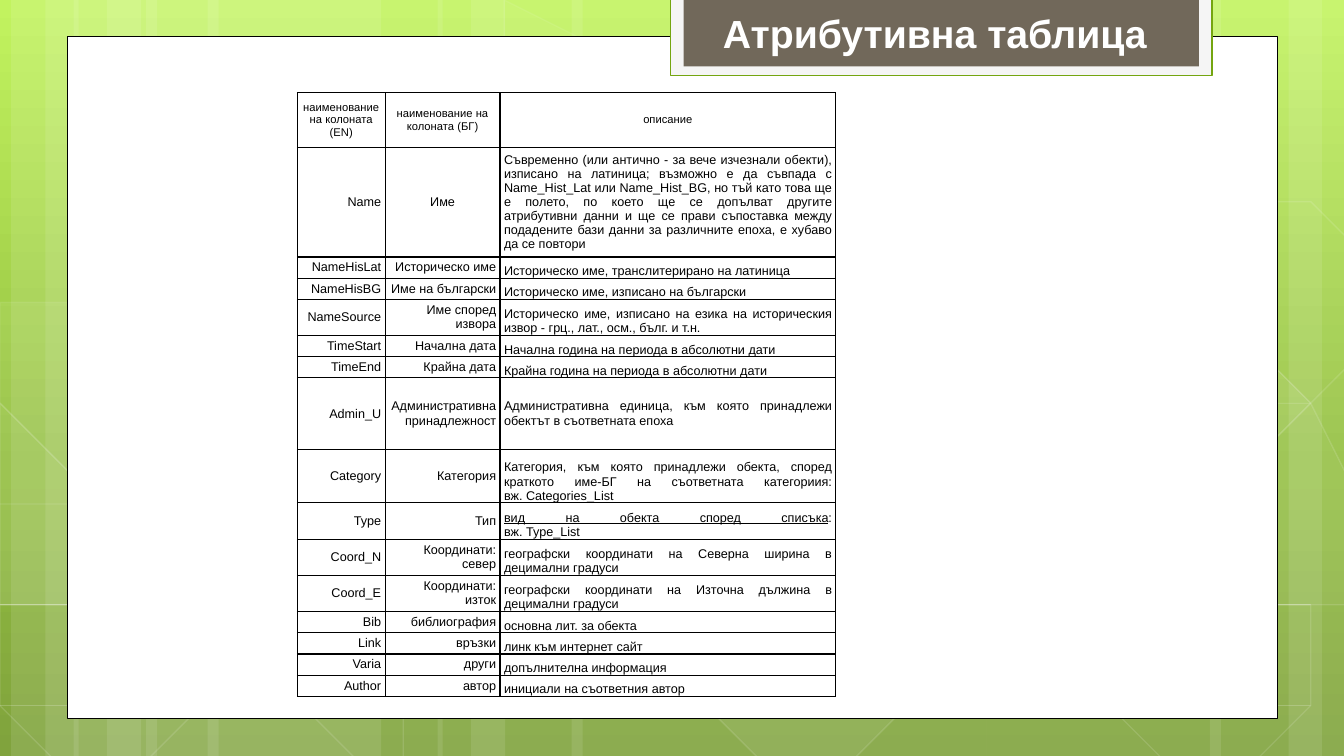
import copy

import pptx
import pptx.dml.color
import pptx.enum.shapes
import pptx.enum.text
import pptx.oxml
import pptx.oxml.ns
import pptx.util

RGBColor = pptx.dml.color.RGBColor
Pt = pptx.util.Pt
PP_ALIGN = pptx.enum.text.PP_ALIGN
ANCHOR = pptx.enum.text.MSO_ANCHOR
qn = pptx.oxml.ns.qn

# Content
TITLE = "Атрибутивна таблица"
HEADER = ("наименование на колоната (EN)", "наименование на колоната (БГ)", "описание")
UNDERLINED = "вид на обекта според списъка"
ATTRIBUTES = [  # row height in inches, column name EN, column name BG, description
    (1.09, "Name", "Име",
     "Съвременно (или антично - за вече изчезнали обекти), изписано на латиница; "
     "възможно е да съвпада с Name_Hist_Lat или Name_Hist_BG, но тъй като това ще е полето, "
     "по което ще се допълват другите атрибутивни данни и ще се прави съпоставка между "
     "подадените бази данни за различните епоха, е хубаво да се повтори"),
    (0.21, "NameHisLat", "Историческо име", "Историческо име, транслитерирано на латиница"),
    (0.21, "NameHisBG", "Име на български", "Историческо име, изписано на български"),
    (0.36, "NameSource", "Име според извора",
     "Историческо име, изписано на езика на историческия извор - грц., лат., осм., бълг. и т.н."),
    (0.21, "TimeStart", "Начална дата", "Начална година на периода в абсолютни дати"),
    (0.21, "TimeEnd", "Крайна дата", "Крайна година на периода в абсолютни дати"),
    (0.71, "Admin_U", "Административна принадлежност",
     "Административна единица, към която принадлежи обектът в съответната епоха"),
    (0.53, "Category", "Категория",
     "Категория, към която принадлежи обекта, според краткото име-БГ "
     "на съответната категориия:\nвж. Categories_List"),
    (0.36, "Type", "Тип", UNDERLINED + ":\nвж. Type_List"),
    (0.36, "Coord_N", "Координати: север",
     "географски координати на Северна ширина в децимални градуси"),
    (0.36, "Coord_E", "Координати: изток",
     "географски координати на Източна дължина в децимални градуси"),
    (0.21, "Bib", "библиография", "основна лит. за обекта"),
    (0.21, "Link", "връзки", "линк към интернет сайт"),
    (0.21, "Varia", "други", "допълнителна информация"),
    (0.21, "Author", "автор", "инициали на съответния автор"),
]
HEADER_HEIGHT = 0.54
COLUMN_WIDTHS = (0.87, 1.14, 3.33)
CENTERED_NAME = "Name"
MIDDLE_DESCRIPTIONS = ("Name", "Admin_U")

# Colours
WHITE = RGBColor(0xFF, 0xFF, 0xFF)
BLACK = RGBColor(0, 0, 0)
FRAME = RGBColor(0xF5, 0xF5, 0xF5)
GREEN = RGBColor(0x74, 0xA5, 0x10)
BROWN = RGBColor(0x71, 0x68, 0x5A)
BACKDROP = [(0, RGBColor(0x80, 0xA3, 0x3D)), (0.38, RGBColor(0x92, 0xBE, 0x3F)),
            (1, RGBColor(0xC2, 0xF3, 0x5F))]

# Decoration, in inches
STRIPES = [(1.45, 2.33), (0.11, 0.67), (0.45, 1.11), (2.06, 2.33), (0.73, 0.67), (1.06, 1.11),
           (9.78, 2.33), (12.78, 0.67), (12, 1.11), (5.67, 4.11), (4.34, 0.67), (4.67, 1.11)]
CURVES = [  # a start point, then three control points for each bend
    [(0.1, 6.73), (0.82, 6.76), (1.54, 6.79), (2.54, 6.78), (3.54, 6.77), (4.77, 6.75), (6.1, 6.65),
     (7.44, 6.55), (9.33, 6.36), (10.56, 6.17), (11.78, 5.98), (13.03, 5.68), (13.43, 5.51)],
    [(0.1, 4.77), (0.48, 4.61), (0.86, 4.46), (1.62, 4.31), (2.38, 4.16), (3.45, 3.94), (4.63, 3.87),
     (5.82, 3.8), (7.25, 3.79), (8.72, 3.87), (10.19, 3.95), (12.63, 4.26), (13.43, 4.34)],
    [(0.08, 6.17), (1.69, 6.72), (3.3, 7.27), (4.46, 7.49)],
    [(0.1, 5.78), (0.51, 5.89), (0.93, 6), (1.71, 6.16), (2.48, 6.31), (3.64, 6.56), (4.75, 6.73),
     (5.87, 6.9), (7.27, 7.08), (8.37, 7.18), (9.48, 7.29), (10.67, 7.33), (11.37, 7.36),
     (12.07, 7.4), (12.26, 7.38), (12.6, 7.38), (12.94, 7.37), (13.19, 7.35), (13.43, 7.34)],
    [(3.23, 7.49), (3.47, 7.29), (3.7, 7.09), (4.03, 6.91), (4.35, 6.73), (4.8, 6.53), (5.17, 6.39),
     (5.54, 6.25), (5.77, 6.19), (6.26, 6.09), (6.75, 5.99), (7.65, 5.85), (8.11, 5.78),
     (8.58, 5.71), (8.65, 5.71), (9.07, 5.69), (9.48, 5.66), (10.13, 5.63), (10.59, 5.62),
     (11.05, 5.61), (11.82, 5.62), (11.82, 5.62), (11.82, 5.62), (12.7, 5.62), (12.7, 5.62),
     (12.95, 5.63), (13.17, 5.64), (13.29, 5.65), (13.41, 5.66), (13.37, 5.65), (13.41, 5.66)],
]
HEXAGON = [(0, 0), (-0.88, 0.37), (-0.76, 1.32), (0.26, 1.91), (1.14, 1.54), (1.02, 0.59)]
HEXAGONS = [  # top corner, fill opacity, line opacity
    (5.49, 0.16, 4, 8), (7.66, 5.69, 6, 12), (1.19, 5.71, 0, 12), (1.23, 2.92, 7, 8),
    (3.35, 5.73, 0, 12), (12.16, 5.74, 0, 12), (12.16, 2.94, 7, 8)]
CUT_HEXAGONS = [  # outline, fill opacity, line opacity
    ([(0, 4.34), (0.13, 4.28), (1.15, 4.87), (1.27, 5.81), (0.39, 6.18), (0.24, 6.09)], 10, 12),
    ([(12.35, 4.74), (13.23, 4.37), (13.32, 4.43), (13.57, 6.25), (13.49, 6.28), (12.47, 5.69)], 4, 12),
    ([(12.35, 1.96), (13.23, 1.59), (13.34, 1.65), (13.57, 3.46), (13.49, 3.5), (12.47, 2.91)], 0, 12)]
PANELS = [  # box, fill, line colour, line width
    ((0.67, 0.36, 12, 6.77), WHITE, BLACK, 0.5),
    ((6.65, -0.02, 5.37, 0.77), FRAME, GREEN, 1.25),
    ((6.78, -0.02, 5.11, 0.68), BROWN, None, 0)]


def inches(value):
    return pptx.util.Cm(value * 2.54)


def add_opacity(colour, percent):
    pptx.oxml.ns  # alpha is held in thousandths of a percent
    colour.append(pptx.oxml.parse_xml(
        f'<a:alpha {pptx.oxml.ns.nsdecls("a")} val="{percent * 1000}"/>'))


def paint(shape, fill, line, width=0, fill_opacity=100, line_opacity=100):
    shape.shadow.inherit = False
    properties = shape.element.spPr
    if fill is None or fill_opacity == 0:
        shape.fill.background()
    else:
        shape.fill.solid()
        shape.fill.fore_color.rgb = fill
        add_opacity(properties.find(qn("a:solidFill")).find(qn("a:srgbClr")), fill_opacity)
    if line is None:
        shape.line.fill.background()
    else:
        shape.line.color.rgb = line
        shape.line.width = Pt(width)
        add_opacity(properties.find(qn("a:ln")).find(".//" + qn("a:srgbClr")), line_opacity)


def add_box(shapes, box):
    return shapes.add_shape(pptx.enum.shapes.MSO_SHAPE.RECTANGLE, *map(inches, box))


def add_outline(shapes, points, close):
    builder = shapes.build_freeform(*points[0], scale=inches(1))
    builder.add_line_segments(points[1:], close=close)
    return builder.convert_to_shape()


def bend_points(controls, steps=10):
    points = [controls[0]]
    for start in range(0, len(controls) - 1, 3):
        bend = controls[start:start + 4]
        for step in range(1, steps + 1):
            t = step / steps
            weights = ((1 - t) ** 3, 3 * t * (1 - t) ** 2, 3 * t * t * (1 - t), t ** 3)
            points.append(tuple(sum(w * p[axis] for w, p in zip(weights, bend)) for axis in (0, 1)))
    return points


def fill_cell(cell, text, size, align, anchor):
    cell.fill.background()
    cell.vertical_anchor = anchor
    cell.margin_left = cell.margin_right = inches(0.04)
    cell.margin_top = cell.margin_bottom = 0
    paragraph = cell.text_frame.paragraphs[0]
    paragraph.alignment = align
    if text.startswith(UNDERLINED):
        paragraph.text = UNDERLINED
        paragraph.runs[0].font.underline = True
        mark, listing = text[len(UNDERLINED):].split("\n")
        paragraph.add_run().text = mark
        paragraph.add_line_break()
        paragraph.add_run().text = listing
    else:
        paragraph.text = text
    for run in paragraph.runs:
        run.font.size, run.font.name, run.font.color.rgb = Pt(size), "Arial", BLACK
    for line_break in paragraph._p.findall(qn("a:br")):
        line_break.append(copy.deepcopy(paragraph.runs[-1]._r.rPr))
    for place, side in enumerate("LRTB"):
        cell._tc.tcPr.insert(place, pptx.oxml.parse_xml(
            f'<a:ln{side} {pptx.oxml.ns.nsdecls("a")} w="12700"><a:solidFill>'
            f'<a:srgbClr val="{BLACK}"/></a:solidFill></a:ln{side}>'))


def main():
    deck = pptx.Presentation()
    deck.slide_width, deck.slide_height = inches(13.33), inches(7.5)
    slide = deck.slides.add_slide(deck.slide_layouts[5])
    shapes = slide.shapes

    # Green backdrop, light at the top
    backdrop = slide.background.fill
    backdrop.gradient()
    backdrop.gradient_angle = 90
    stops = slide.background._cSld.find(".//" + qn("a:gsLst"))
    stops.append(copy.deepcopy(stops[-1]))
    for stop, (position, colour) in zip(backdrop.gradient_stops, BACKDROP):
        stop.position, stop.color.rgb = position, colour

    # Stripes, curves and hexagons
    for left, width in STRIPES:
        paint(add_box(shapes, (left, 0, width, 7.5)), WHITE, None, fill_opacity=10)
    for controls in CURVES:
        paint(add_outline(shapes, bend_points(controls), False), None, WHITE, 0.5, line_opacity=20)
    whole = [([(x + dx, y + dy) for dx, dy in HEXAGON], fill, line) for x, y, fill, line in HEXAGONS]
    for outline, fill, line in whole + CUT_HEXAGONS:
        paint(add_outline(shapes, outline, True), WHITE, WHITE, 1, fill, line)

    # White sheet and title plate
    for box, fill, line, width in PANELS:
        paint(add_box(shapes, box), fill, line, width)

    # Attribute table
    heights = [HEADER_HEIGHT] + [row[0] for row in ATTRIBUTES]
    table = shapes.add_table(len(heights), len(COLUMN_WIDTHS), inches(2.95), inches(0.92),
                             inches(sum(COLUMN_WIDTHS)), inches(sum(heights))).table
    table.first_row = table.horz_banding = False
    for column, width in zip(table.columns, COLUMN_WIDTHS):
        column.width = inches(width)
    for row, height in zip(table.rows, heights):
        row.height = inches(height)
    for column, label in enumerate(HEADER):
        fill_cell(table.cell(0, column), label, 8, PP_ALIGN.CENTER, ANCHOR.MIDDLE)
    for row, (_, name, bulgarian, description) in enumerate(ATTRIBUTES, 1):
        middle = name in MIDDLE_DESCRIPTIONS
        fill_cell(table.cell(row, 0), name, 9, PP_ALIGN.RIGHT, ANCHOR.MIDDLE)
        fill_cell(table.cell(row, 1), bulgarian, 9,
                  PP_ALIGN.CENTER if name == CENTERED_NAME else PP_ALIGN.RIGHT, ANCHOR.MIDDLE)
        fill_cell(table.cell(row, 2), description, 9, PP_ALIGN.JUSTIFY,
                  ANCHOR.MIDDLE if middle else ANCHOR.BOTTOM)

    # Title, in front of its plate
    title = shapes.title
    shapes.element.append(title.element)
    title.left, title.top, title.width, title.height = map(inches, (7.07, 0.04, 4.47, 0.57))
    frame = title.text_frame
    frame.text = TITLE
    frame.word_wrap = False
    frame.auto_size = pptx.enum.text.MSO_AUTO_SIZE.SHAPE_TO_FIT_TEXT
    frame.vertical_anchor = ANCHOR.TOP
    frame.paragraphs[0].alignment = PP_ALIGN.LEFT
    font = frame.paragraphs[0].runs[0].font
    font.size, font.name, font.bold, font.color.rgb = Pt(28), "Arial", True, WHITE

    deck.save("out.pptx")


if __name__ == "__main__":
    main()
